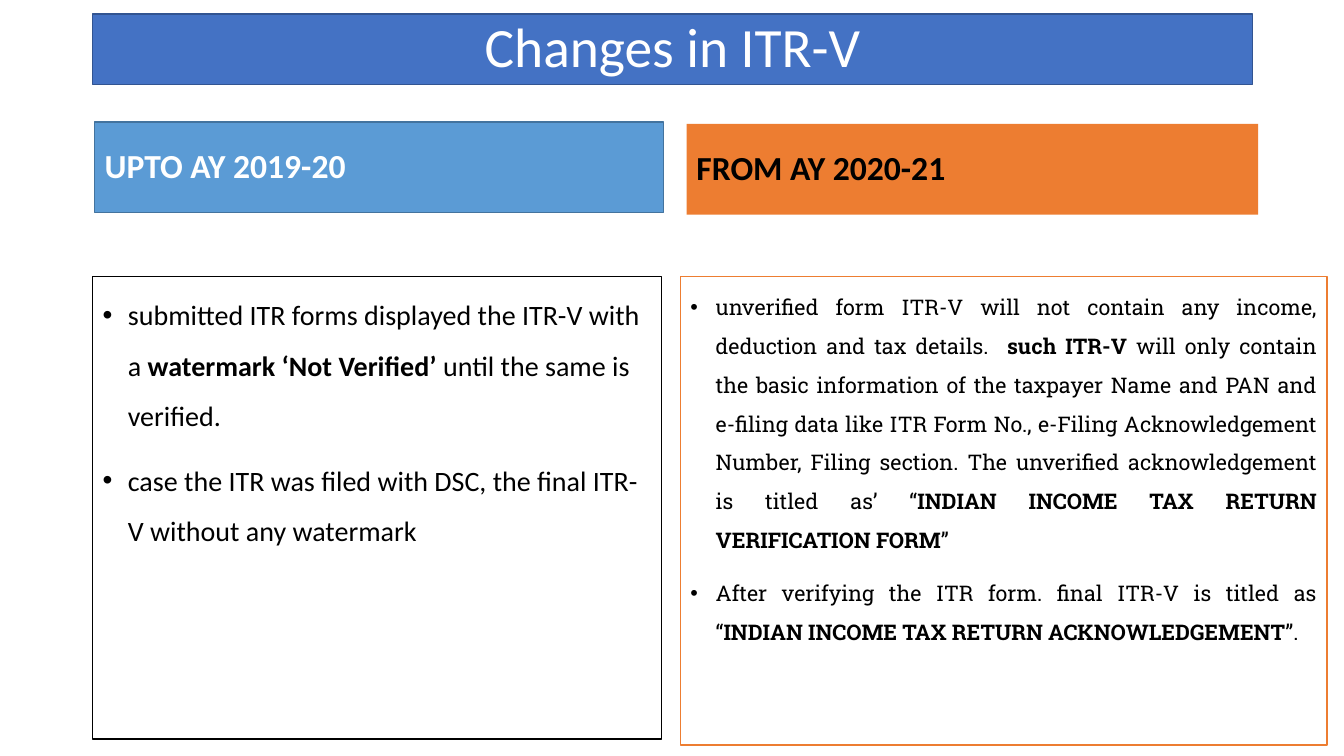
from dataclasses import dataclass
from typing import Optional

from lxml import etree
from pptx import Presentation
from pptx.dml.color import RGBColor
from pptx.enum import shapes, text
from pptx.oxml.ns import qn
from pptx.util import Inches, Pt

WHITE = RGBColor(0xFF, 0xFF, 0xFF)
BLACK = RGBColor(0x00, 0x00, 0x00)
BLUE = RGBColor(0x44, 0x72, 0xC4)
DARK_BLUE = RGBColor(0x32, 0x54, 0x91)
LIGHT_BLUE = RGBColor(0x5B, 0x9B, 0xD5)
STEEL_BLUE = RGBColor(0x43, 0x73, 0x9E)
ORANGE = RGBColor(0xED, 0x7D, 0x31)

Run = tuple[str, bool]  # wording, bold


@dataclass
class Panel:
    box: tuple[float, float, float, float]
    fill: RGBColor
    line: Optional[RGBColor]
    paragraphs: list[list[Run]]
    size: float
    color: RGBColor = BLACK
    font: str = "Calibri"
    align: text.PP_ALIGN = text.PP_ALIGN.LEFT
    spacing: float = 0.9
    before: float = 10
    bulleted: bool = False


TITLE = Panel((0.92, 0.14, 11.5, 0.7), BLUE, DARK_BLUE, [[("Changes in ITR-V", False)]],
              39.6, WHITE, align=text.PP_ALIGN.CENTER, before=0)

PANELS = [
    # Assessment years up to 2019-20
    Panel((0.94, 1.21, 5.64, 0.9), LIGHT_BLUE, STEEL_BLUE,
          [[("UPTO AY 2019-20", True)]], 24, WHITE),
    Panel((0.92, 2.74, 5.64, 4.59), WHITE, BLACK, [
        [("submitted ITR forms displayed the ITR-V with a ", False),
         ("watermark ‘Not Verified’ ", True),
         ("until the same is verified.", False)],
        [("case the ITR was filed with DSC, the final ITR-V without any watermark", False)],
    ], 20, spacing=1.5, bulleted=True),
    # Assessment years from 2020-21
    Panel((6.81, 1.23, 5.67, 0.9), ORANGE, None, [[("FROM AY 2020-21", True)]], 24),
    Panel((6.75, 2.74, 6.41, 4.65), WHITE, ORANGE, [
        [("unverified form ITR-V will not contain any income, deduction and tax details. ", False),
         (" such ITR-V", True),
         (" will only contain the basic information of the taxpayer Name and PAN and "
          "e-filing data like ITR Form No., e-Filing Acknowledgement Number, Filing section. "
          "The unverified acknowledgement is titled as’ “", False),
         ("INDIAN INCOME TAX RETURN VERIFICATION FORM", True),
         ("” ", False)],
        [("After verifying the ITR form. final ITR-V is titled as “", False),
         ("INDIAN INCOME TAX RETURN ACKNOWLEDGEMENT", True),
         ("”. ", False)],
    ], 15.4, font="Roboto Slab", align=text.PP_ALIGN.JUSTIFY, spacing=1.5, bulleted=True),
]


def add_bullet(paragraph) -> None:
    properties = paragraph._p.get_or_add_pPr()
    properties.set("marL", str(Inches(0.25)))
    properties.set("indent", str(-Inches(0.25)))
    etree.SubElement(properties, qn("a:buFont")).set("typeface", "Arial")
    etree.SubElement(properties, qn("a:buChar")).set("char", "•")


def format_panel(shape, panel: Panel) -> None:
    shape.left, shape.top, shape.width, shape.height = map(Inches, panel.box)
    shape.fill.solid()
    shape.fill.fore_color.rgb = panel.fill
    if panel.line is None:
        shape.line.fill.background()
    else:
        shape.line.color.rgb = panel.line
        shape.line.width = Pt(1)

    frame = shape.text_frame
    frame.word_wrap = True
    frame.auto_size = text.MSO_AUTO_SIZE.NONE
    frame.vertical_anchor = text.MSO_ANCHOR.TOP if panel.bulleted else text.MSO_ANCHOR.MIDDLE
    for index, runs in enumerate(panel.paragraphs):
        paragraph = frame.add_paragraph() if index else frame.paragraphs[0]
        paragraph.alignment = panel.align
        paragraph.line_spacing = panel.spacing
        paragraph.space_before = Pt(panel.before)
        paragraph.font.name = panel.font
        paragraph.font.size = Pt(panel.size)
        paragraph.font.color.rgb = panel.color
        if panel.bulleted:
            add_bullet(paragraph)
        for wording, bold in runs:
            run = paragraph.add_run()
            run.text = wording
            run.font.bold = bold


def main() -> None:
    presentation = Presentation()
    presentation.slide_width = Inches(13.33)
    presentation.slide_height = Inches(7.5)
    slide = presentation.slides.add_slide(presentation.slide_layouts.get_by_name("Title Only"))

    # Title band
    format_panel(slide.shapes.title, TITLE)

    # Headings and their text boxes
    for panel in PANELS:
        shape = slide.shapes.add_shape(shapes.MSO_SHAPE.RECTANGLE, *map(Inches, panel.box))
        shape.shadow.inherit = False
        format_panel(shape, panel)

    presentation.save("out.pptx")


if __name__ == "__main__":
    main()
